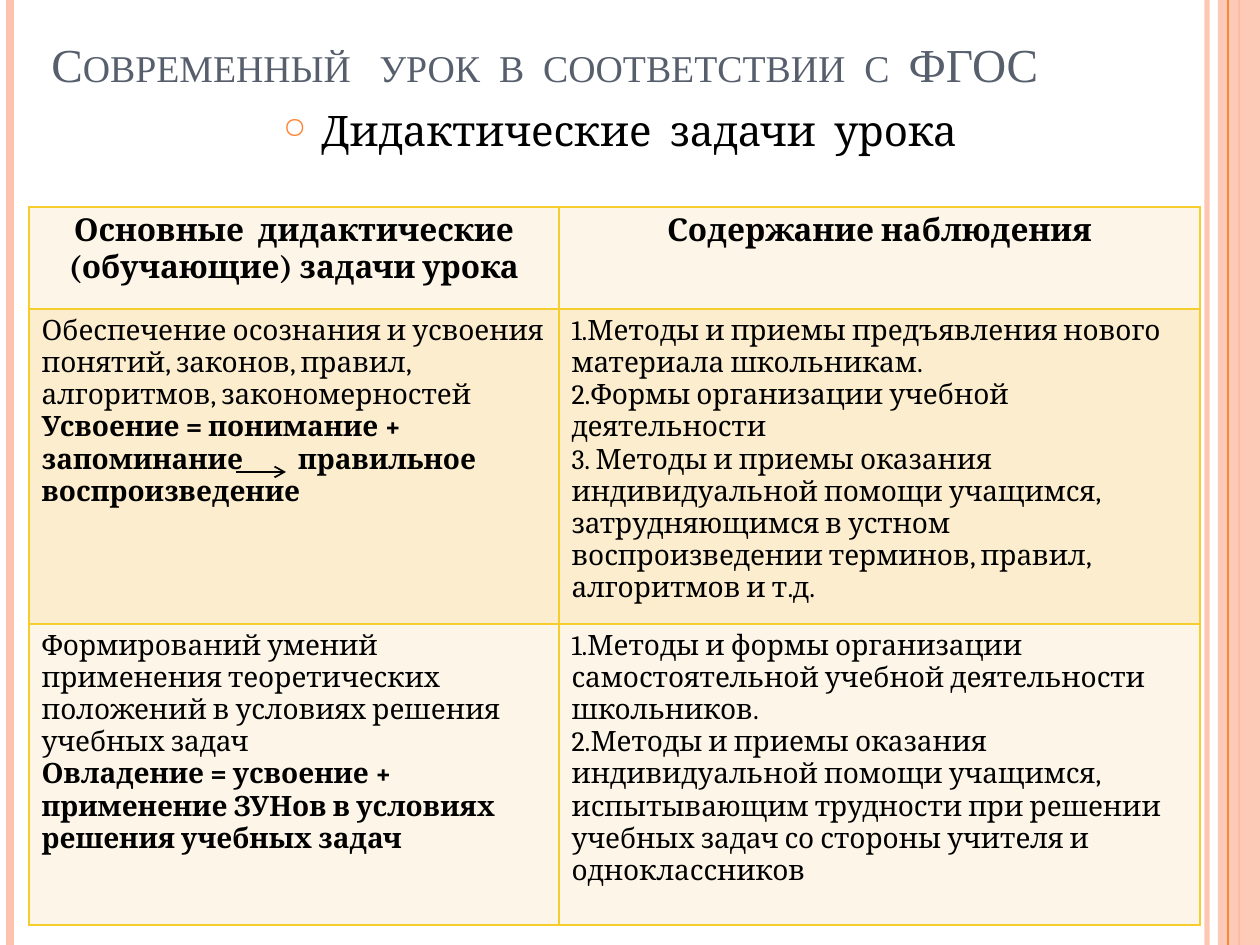
"""Builds a slide about the didactic tasks of a modern lesson."""
from typing import NamedTuple

from lxml.etree import SubElement
from pptx import Presentation
from pptx.dml.color import RGBColor
from pptx.enum.shapes import MSO_CONNECTOR as CONN, MSO_SHAPE as SHAPE
from pptx.enum.text import MSO_ANCHOR as ANCHOR, PP_ALIGN as ALIGN
from pptx.oxml.ns import qn
from pptx.util import Emu, Pt

PX = 914400 / 126
W, H = 1260, 945
PEACH, ORANGE, BLACK, GOLD = "FEC3AE", "FE8637", "000000", "F5CD2D"
PALE, CREAM = "FDF6E8", "FBEDCD"


class Line(NamedTuple):
    x1: int
    y1: int
    x2: int
    y2: int
    color: str
    width: float
    alpha: int = 100
    arrow: bool = False


class Para(NamedTuple):
    text: str
    size: int = 16
    bold: bool = False
    align: ALIGN = ALIGN.LEFT
    font: str = "Cambria"
    color: str = BLACK


class Row(NamedTuple):
    height: int
    fill: str
    cells: list[list[Para]]


STRIPES = [
    Line(1207, 0, 1207, H, PEACH, 3, 93),
    Line(10, 0, 10, H, PEACH, 4.5),
    Line(1239, 0, 1239, H, ORANGE, 1.5),
    Line(1228, 0, 1228, H, ORANGE, 0.75),
]
ARROW = Line(236, 472, 286, 472, BLACK, 1, arrow=True)
TITLE = Para("Современный   урок  в  соответствии  с  ФГОС", 27,
             font="Times New Roman", color="575F6D")
SUBTITLE = Para("Дидактические  задачи  урока", 24, align=ALIGN.CENTER)
COLS = [530, 641]
ROWS = [
    Row(102, PALE, [
        [Para("Основные  дидактические (обучающие) задачи урока", 18, True, ALIGN.CENTER)],
        [Para("Содержание наблюдения", 18, True, ALIGN.CENTER)],
    ]),
    Row(266, CREAM, [
        [Para("Обеспечение осознания и усвоения понятий, законов, правил, "
              "алгоритмов, закономерностей"),
         Para("Усвоение = понимание + запоминание         правильное "
              "воспроизведение", bold=True)],
        [Para("1.Методы и приемы предъявления нового материала школьникам."),
         Para("2.Формы организации учебной деятельности"),
         Para("3. Методы и приемы оказания индивидуальной помощи учащимся, "
              "затрудняющимся в устном воспроизведении терминов, правил, "
              "алгоритмов и т.д.")],
    ]),
    Row(301, PALE, [
        [Para("Формирований умений применения теоретических положений в "
              "условиях решения учебных задач"),
         Para("Овладение = усвоение + применение ЗУНов в условиях решения "
              "учебных задач", bold=True)],
        [Para("1.Методы и формы организации самостоятельной учебной "
              "деятельности школьников."),
         Para("2.Методы и приемы оказания индивидуальной помощи учащимся, "
              "испытывающим трудности при решении учебных задач со стороны "
              "учителя и одноклассников")],
    ]),
]


def px(n: float) -> Emu:
    """Turns px into EMU."""
    return Emu(round(n * PX))


def rgb(color: str) -> RGBColor:
    """Turns a hex string into a colour."""
    return RGBColor.from_string(color)


def add_xml(parent, tag: str, **attrs: str):
    """Appends an element with attributes."""
    return SubElement(parent, qn(tag), attrs)


def set_alpha(sp, alpha: int) -> None:
    """Sets the opacity of a shape's first colour, in percent."""
    clr = next(sp._element.spPr.iter(qn("a:srgbClr")))
    add_xml(clr, "a:alpha", val=str(alpha * 1000))


def draw_line(s, line: Line) -> None:
    """Draws a straight line or arrow."""
    sp = s.shapes.add_connector(CONN.STRAIGHT, *map(px, line[:4]))
    sp.line.color.rgb = rgb(line.color)
    sp.line.width = Pt(line.width)
    if line.alpha < 100:
        set_alpha(sp, line.alpha)
    if line.arrow:
        add_xml(sp.line._get_or_add_ln(), "a:tailEnd", type="arrow")
    add_xml(sp._element.spPr, "a:effectLst")


def draw_band(s) -> None:
    """Draws the translucent band at the right edge."""
    sp = s.shapes.add_shape(SHAPE.RECTANGLE, px(1218), 0, px(W - 1218), px(H))
    sp.shadow.inherit = False
    sp.fill.solid()
    sp.fill.fore_color.rgb = rgb(PEACH)
    sp.line.fill.background()
    set_alpha(sp, 87)


def write(tf, paras: list[Para]) -> None:
    """Fills a text frame with paragraphs."""
    tf.word_wrap = True
    for i, para in enumerate(paras):
        p = tf.add_paragraph() if i else tf.paragraphs[0]
        p.alignment = para.align
        r = p.add_run()
        r.text = para.text
        fmt = {"name": para.font, "size": Pt(para.size), "bold": para.bold}
        for key, value in fmt.items():
            setattr(r.font, key, value)
        r.font.color.rgb = rgb(para.color)


def draw_text(s, box: tuple[int, int, int, int], para: Para, anchor: ANCHOR):
    """Draws a text box and returns its paragraph."""
    tf = s.shapes.add_textbox(*map(px, box)).text_frame
    write(tf, [para])
    tf.vertical_anchor = anchor
    return tf.paragraphs[0]


def add_bullet(p) -> None:
    """Gives a paragraph an orange ring bullet with a hanging indent."""
    p.space_before = Pt(6)
    pPr = p._p.get_or_add_pPr()
    pPr.set("marL", str(px(38)))
    pPr.set("indent", str(-px(38)))
    add_xml(add_xml(pPr, "a:buClr"), "a:srgbClr", val=ORANGE)
    add_xml(pPr, "a:buSzPct", val="70000")
    add_xml(pPr, "a:buChar", char="○")


def set_borders(cell) -> None:
    """Draws gold borders on all sides of a cell."""
    tcPr = cell._tc.get_or_add_tcPr()
    for side in ("a:lnL", "a:lnR", "a:lnT", "a:lnB"):
        ln = add_xml(tcPr, side, w=str(Pt(1)))
        add_xml(add_xml(ln, "a:solidFill"), "a:srgbClr", val=GOLD)


def draw_table(s) -> None:
    """Draws the table of tasks and observations."""
    height = sum(row.height for row in ROWS)
    box = map(px, (29, 207, sum(COLS), height))
    table = s.shapes.add_table(len(ROWS), len(COLS), *box).table
    for col, width in zip(table.columns, COLS):
        col.width = px(width)
    for i, row in enumerate(ROWS):
        table.rows[i].height = px(row.height)
        for j, paras in enumerate(row.cells):
            cell = table.cell(i, j)
            write(cell.text_frame, paras)
            set_borders(cell)
            cell.fill.solid()
            cell.fill.fore_color.rgb = rgb(row.fill)


def main() -> None:
    """Builds and saves the slide."""
    prs = Presentation()
    prs.slide_width, prs.slide_height = px(W), px(H)
    s = prs.slides.add_slide(prs.slide_layouts[6])
    for stripe in STRIPES[:3]:
        draw_line(s, stripe)
    draw_band(s)
    draw_line(s, STRIPES[3])
    add_bullet(draw_text(s, (29, 98, 1182, 808), SUBTITLE, ANCHOR.TOP))
    p = draw_text(s, (39, 29, 1152, 69), TITLE, ANCHOR.BOTTOM)
    p.runs[0].font._element.set("cap", "small")
    draw_table(s)
    draw_line(s, ARROW)
    prs.save("out.pptx")


if __name__ == "__main__":
    main()
